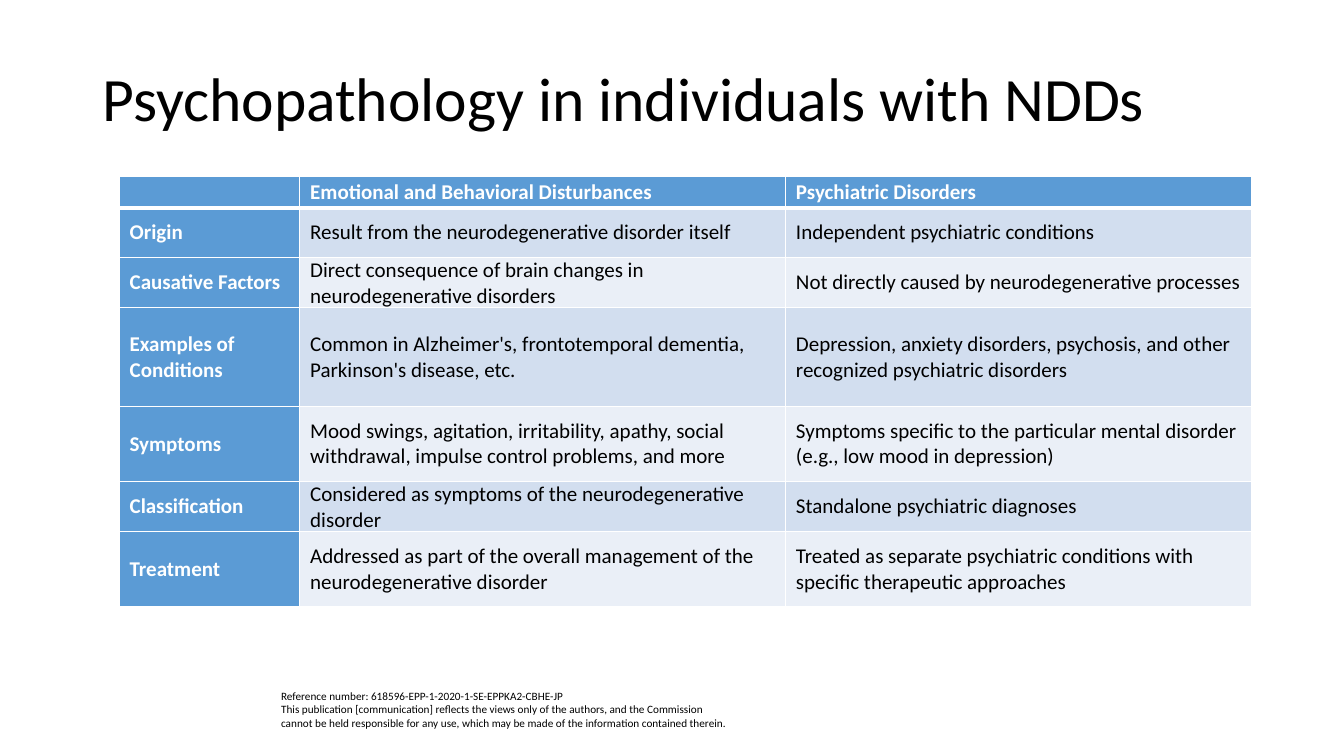
"""Build a slide comparing behavioral disturbances with psychiatric disorders."""
from dataclasses import dataclass

from lxml import etree
from pptx import Presentation
from pptx.dml.color import RGBColor
from pptx.enum.text import MSO_ANCHOR
from pptx.oxml.ns import qn
from pptx.util import Pt

MIDDLE = MSO_ANCHOR.MIDDLE


@dataclass(frozen=True)
class Theme:
    font: str = "Calibri"
    black: str = "000000"
    white: str = "FFFFFF"
    blue: str = "5B9BD5"
    bands: tuple = ("EAEFF7", "D2DEEF")
    title: int = 44
    body: int = 15
    note: int = 8


theme = Theme()


def style(frame, size, color, bold=False):
    frame.word_wrap = True
    for para in frame.paragraphs:
        for run in para.runs:
            run.font.name = theme.font
            run.font.size = Pt(size)
            run.font.bold = bold
            run.font.color.rgb = RGBColor.from_string(color)


def edge(cell, side, width):
    props = cell._tc.get_or_add_tcPr()
    line = etree.SubElement(props, qn(f"a:ln{side}"), w=str(Pt(width)))
    fill = etree.SubElement(line, qn("a:solidFill"))
    etree.SubElement(fill, qn("a:srgbClr"), val=theme.white)


deck = Presentation()
deck.slide_width, deck.slide_height = Pt(960), Pt(540)
slide = deck.slides.add_slide(deck.slide_layouts[6])

note = slide.shapes.add_textbox(Pt(193.7), Pt(488.9), Pt(334), Pt(36)).text_frame
note.text = (
    "Reference number: 618596-EPP-1-2020-1-SE-EPPKA2-CBHE-JP\n"
    "This publication [communication] reflects the views only of the authors, "
    "and the Commission cannot be held responsible for any use, which may be "
    "made of the information contained therein."
)
style(note, theme.note, theme.black)

title = slide.shapes.add_textbox(Pt(66), Pt(38.2), Pt(828), Pt(69)).text_frame
title.text = "Psychopathology in individuals with NDDs"
title.vertical_anchor = MIDDLE
title.paragraphs[0].line_spacing = 0.9
style(title, theme.title, theme.black)

rows = [
    (22.3, "", "Emotional and Behavioral Disturbances", "Psychiatric Disorders"),
    (35.3, "Origin", "Result from the neurodegenerative disorder itself",
     "Independent psychiatric conditions"),
    (35.3, "Causative Factors",
     "Direct consequence of brain changes in neurodegenerative disorders",
     "Not directly caused by neurodegenerative processes"),
    (70.6, "Examples of Conditions",
     "Common in Alzheimer's, frontotemporal dementia, Parkinson's disease, etc.",
     "Depression, anxiety disorders, psychosis, and other recognized psychiatric disorders"),
    (53.3, "Symptoms",
     "Mood swings, agitation, irritability, apathy, social withdrawal, "
     "impulse control problems, and more",
     "Symptoms specific to the particular mental disorder (e.g., low mood in depression)"),
    (35.3, "Classification",
     "Considered as symptoms of the neurodegenerative disorder",
     "Standalone psychiatric diagnoses"),
    (53.3, "Treatment",
     "Addressed as part of the overall management of the neurodegenerative disorder",
     "Treated as separate psychiatric conditions with specific therapeutic approaches"),
]
widths = [129, 347, 333.3]
high = sum(row[0] for row in rows)
table = slide.shapes.add_table(
    len(rows), len(widths), Pt(85), Pt(126.3), Pt(sum(widths)), Pt(high)
).table
table.first_col = True
for col, width in zip(table.columns, widths):
    col.width = Pt(width)

for r, (height, *texts) in enumerate(rows):
    table.rows[r].height = Pt(height)
    for c, text in enumerate(texts):
        cell = table.cell(r, c)
        head = r == 0 or c == 0
        cell.text = text
        cell.vertical_anchor = MIDDLE
        cell.margin_left = cell.margin_right = Pt(7.6)
        cell.margin_top = cell.margin_bottom = 0
        style(cell.text_frame, theme.body, theme.white if head else theme.black, head)
        for side in "LRTB":
            thick = (r, side) in ((0, "B"), (1, "T"))
            edge(cell, side, 3 if thick else 1)
        cell.fill.solid()
        shade = theme.blue if head else theme.bands[r % 2]
        cell.fill.fore_color.rgb = RGBColor.from_string(shade)

deck.save("out.pptx")
